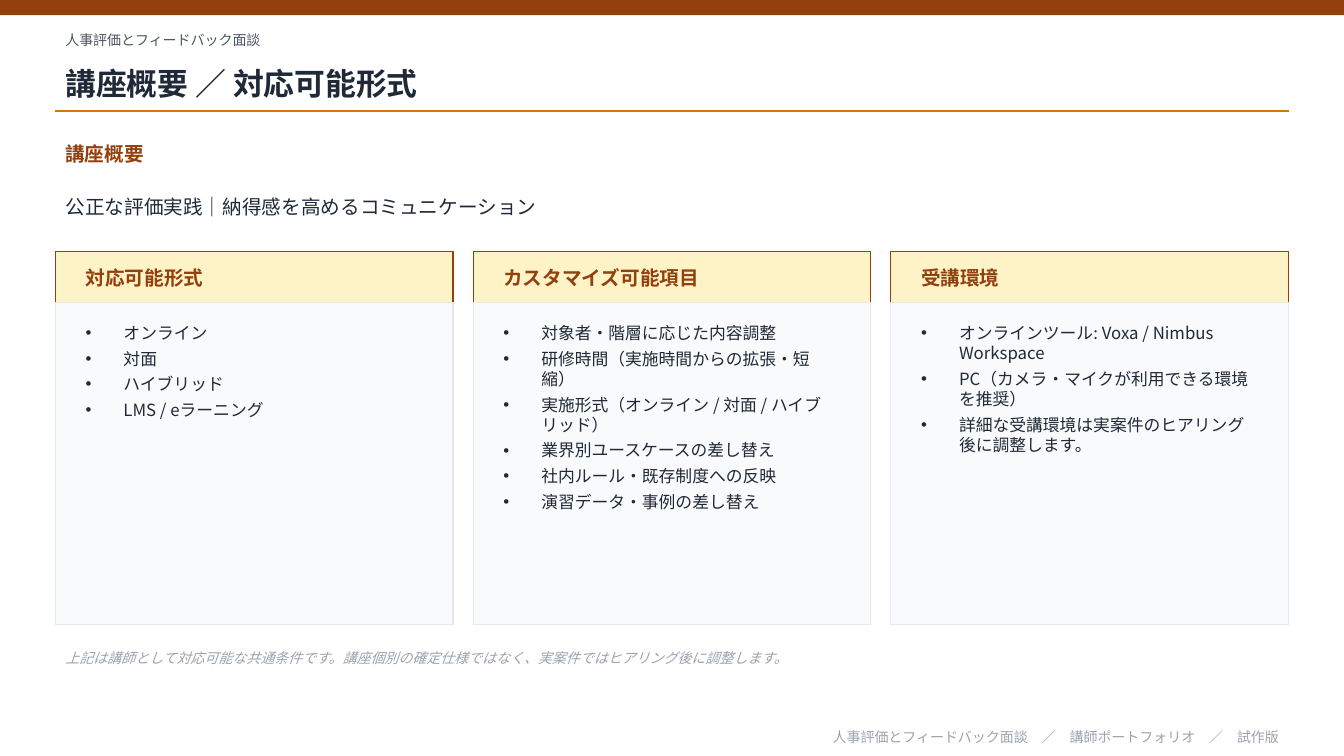
from lxml.etree import SubElement
from pptx import Presentation
from pptx.dml.color import RGBColor
from pptx.enum.shapes import MSO_CONNECTOR, MSO_SHAPE
from pptx.enum.text import MSO_ANCHOR, MSO_AUTO_SIZE, PP_ALIGN
from pptx.oxml.ns import qn
from pptx.util import Pt

FONT = "Noto Sans CJK JP"
COLORS = {
    "brown": "92400E", "amber": "D97706", "cream": "FEF3C7", "panel": "F9FAFB",
    "border": "E5E7EB", "ink": "1F2937", "slate": "4B5563", "muted": "9CA3AF",
}
SLIDE_WIDTH, SLIDE_HEIGHT = 960, 540
MARGIN = 39.6
CONTENT_WIDTH = SLIDE_WIDTH - 2 * MARGIN
GAP = 14.4
PADDING = 14.4
CARD_TOP, HEADER_HEIGHT, PANEL_HEIGHT = 180, 36, 230.4
INDENT = 27
CARDS = [
    (1, "対応可能形式", ["オンライン", "対面", "ハイブリッド", "LMS / eラーニング"]),
    (2, "カスタマイズ可能項目", [
        "対象者・階層に応じた内容調整",
        "研修時間（実施時間からの拡張・短縮）",
        "実施形式（オンライン / 対面 / ハイブリッド）",
        "業界別ユースケースの差し替え",
        "社内ルール・既存制度への反映",
        "演習データ・事例の差し替え",
    ]),
    (4, "受講環境", [
        "オンラインツール: Voxa / Nimbus Workspace",
        "PC（カメラ・マイクが利用できる環境を推奨）",
        "詳細な受講環境は実案件のヒアリング後に調整します。",
    ]),
]


def color(name):
    return RGBColor.from_string(COLORS[name])


def add_run(paragraph, text, size, color_name, bold=False, italic=False):
    run = paragraph.add_run()
    run.text = text
    font = run.font
    font.size, font.bold, font.italic = Pt(size), bold, italic
    font.color.rgb = color(color_name)
    font.name = FONT
    SubElement(font._element, qn("a:ea"), typeface=FONT)


def place(shape, left, top, width, height, anchor=MSO_ANCHOR.MIDDLE):
    shape.left, shape.top = Pt(left), Pt(top)
    shape.width, shape.height = Pt(width), Pt(height)
    frame = shape.text_frame
    frame.word_wrap = True
    frame.auto_size = MSO_AUTO_SIZE.NONE
    frame.vertical_anchor = anchor
    return frame


def write_line(shape, box, text, size, color_name, align=PP_ALIGN.LEFT, **style):
    paragraph = place(shape, *box).paragraphs[0]
    paragraph.alignment = align
    paragraph.space_before = Pt(0)
    add_run(paragraph, text, size, color_name, **style)


def add_label(slide, box, *content, **style):
    write_line(slide.shapes.add_textbox(0, 0, 0, 0), box, *content, **style)


def add_box(slide, box, fill, line=None):
    shape = slide.shapes.add_shape(MSO_SHAPE.RECTANGLE, *map(Pt, box))
    shape.shadow.inherit = False
    shape.fill.solid()
    shape.fill.fore_color.rgb = color(fill)
    if line:
        shape.line.color.rgb = color(line)
        shape.line.width = Pt(0.75)
    else:
        shape.line.fill.background()


def add_rule(slide, top):
    rule = slide.shapes.add_connector(
        MSO_CONNECTOR.STRAIGHT, Pt(MARGIN), Pt(top), Pt(MARGIN + CONTENT_WIDTH), Pt(top))
    rule.line.color.rgb = color("amber")
    rule.line.width = Pt(1)
    SubElement(rule._element.spPr, qn("a:effectLst"))


def write_list(shape, box, items):
    frame = place(shape, *box, anchor=MSO_ANCHOR.TOP)
    for index, item in enumerate(items):
        paragraph = frame.add_paragraph() if index else frame.paragraphs[0]
        paragraph.space_before, paragraph.space_after = Pt(0), Pt(4)
        properties = paragraph._p.get_or_add_pPr()
        properties.set("marL", str(Pt(INDENT)))
        properties.set("indent", str(Pt(-INDENT)))
        SubElement(properties, qn("a:buChar"), char="•")
        add_run(paragraph, item, 12, "ink")


def add_card(slide, left, width, heading, body, items):
    panel_top = CARD_TOP + HEADER_HEIGHT
    inner_left, inner_width = left + PADDING, width - 2 * PADDING
    add_box(slide, (left, CARD_TOP, width, HEADER_HEIGHT), "cream", "brown")
    add_label(slide, (inner_left, CARD_TOP, inner_width, HEADER_HEIGHT),
              heading, 14, "brown", bold=True)
    add_box(slide, (left, panel_top, width, PANEL_HEIGHT), "panel", "border")
    slide.shapes._spTree.append(body._element)
    write_list(body, (inner_left, panel_top + 10.8, inner_width, 205.2), items)


def main():
    presentation = Presentation()
    presentation.slide_width, presentation.slide_height = Pt(SLIDE_WIDTH), Pt(SLIDE_HEIGHT)
    slide = presentation.slides.add_slide(presentation.slide_layouts.get_by_name("Comparison"))
    bodies = {body.placeholder_format.idx: body for body in slide.placeholders}

    def row(top, height):
        return MARGIN, top, CONTENT_WIDTH, height

    add_box(slide, (0, 0, SLIDE_WIDTH, 10.8), "brown")
    add_label(slide, row(18, 21.6), "人事評価とフィードバック面談", 10, "slate")
    write_line(slide.shapes.title, row(39.6, 39.6), "講座概要 ／ 対応可能形式", 22, "ink", bold=True)
    add_rule(slide, 79.2)
    add_label(slide, row(97.2, 25.2), "講座概要", 14, "brown", bold=True)
    write_line(bodies[3], row(126, 43.2),
               "公正な評価実践｜納得感を高めるコミュニケーション", 14, "ink")

    width = (CONTENT_WIDTH - GAP * (len(CARDS) - 1)) / len(CARDS)
    for column, (body_index, heading, items) in enumerate(CARDS):
        add_card(slide, MARGIN + column * (width + GAP), width,
                 heading, bodies[body_index], items)

    add_label(slide, row(457.2, 25.2),
              "上記は講師として対応可能な共通条件です。講座個別の確定仕様ではなく、実案件ではヒアリング後に調整します。",
              10, "muted", italic=True)
    add_label(slide, row(518.4, 15.84),
              "人事評価とフィードバック面談　／　講師ポートフォリオ　／　試作版",
              10, "muted", align=PP_ALIGN.RIGHT)
    presentation.save("out.pptx")


if __name__ == "__main__":
    main()
